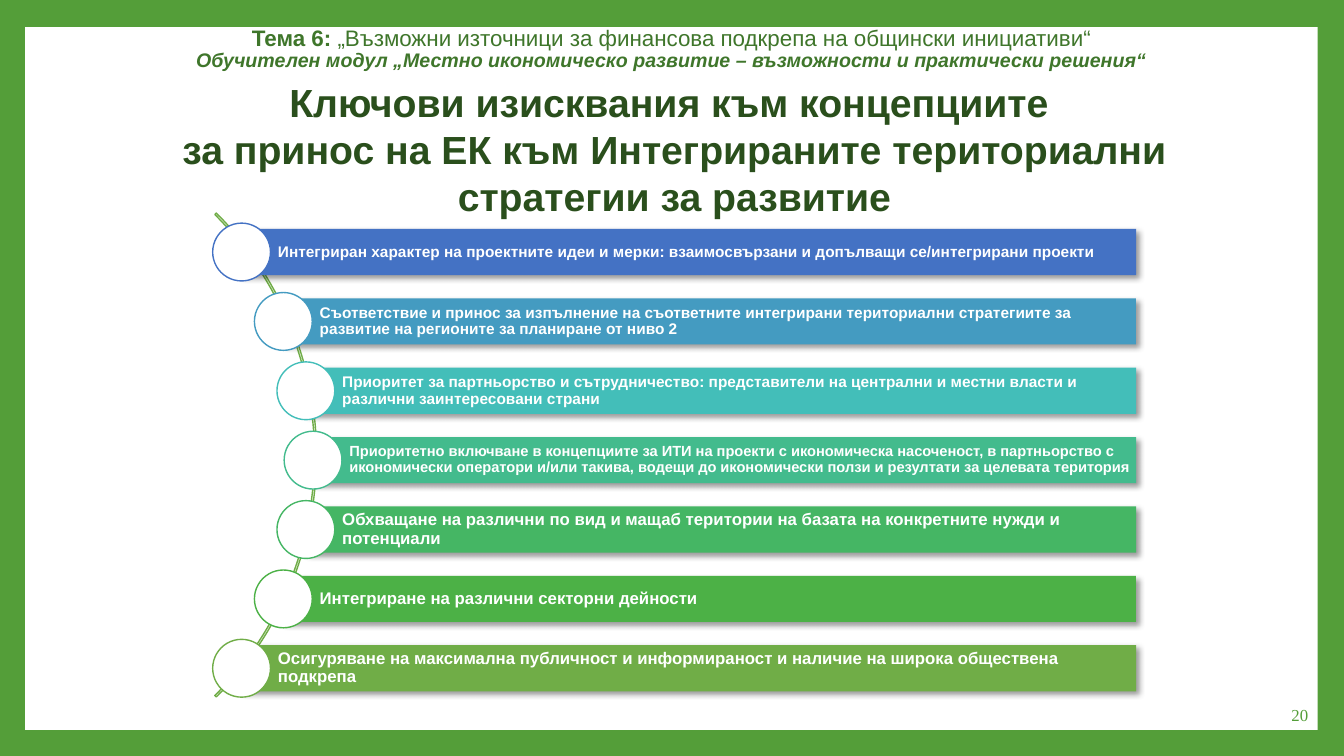
import math
from lxml import etree
from pptx import Presentation
from pptx import util as u
from pptx.dml.color import RGBColor
from pptx.enum import shapes, text
from pptx.oxml import ns

HEX = {"frame": "549E39", "white": "FFFFFF", "title": "2A4F1C",
       "head": "3F762B", "arc": "70AD47", "shade": "000000"}

# Bar colour, text size, wording
ROWS = [
    ("4472C4", 11, "Интегриран характер на проектните идеи и мерки: взаимосвързани и допълващи се/интегрирани проекти"),
    ("449BC1", 11, "Съответствие и принос за изпълнение на съответните интегрирани териториални стратегиите за развитие на регионите за планиране от ниво 2"),
    ("43BEB9", 11, "Приоритет за партньорство и сътрудничество: представители на централни и местни власти и различни заинтересовани страни"),
    ("43BB8D", 10.5, "Приоритетно включване в концепциите за ИТИ на проекти с икономическа насоченост, в партньорство с икономически оператори и/или такива, водещи до икономически ползи и резултати за целевата територия"),
    ("45B664", 12, "Обхващане на различни по вид и мащаб територии на базата на конкретните нужди и потенциали"),
    ("4CB146", 12, "Интегриране на различни секторни дейности"),
    ("70AD47", 12, "Осигуряване на максимална публичност и информираност и наличие на широка обществена подкрепа"),
]

# Bar layout: left ends lie on a circle around (MID_X, MID_Y)
MID_X, MID_Y, REACH = -18.4, 328.7, 242
STEP, BAR, DOT, RIGHT = 49.55, 33, 41.3, 811.5


def color(code):
    return RGBColor.from_string(code)


def box(left, top, width, height):
    return [u.Pt(v) for v in (left, top, width, height)]


def add_shape(slide, kind, place, fill=None, line=None):
    shape = slide.shapes.add_shape(kind, *box(*place))
    shape.shadow.inherit = False
    if fill:
        shape.fill.solid()
        shape.fill.fore_color.rgb = color(fill)
    else:
        shape.fill.background()
    if line:
        shape.line.color.rgb = color(line)
        shape.line.width = u.Pt(1)
    else:
        shape.line.fill.background()
    return shape


def style(run, size, code, bold=False, slant=False, face="Arial"):
    font = run.font
    font.size, font.name = u.Pt(size), face
    font.bold, font.italic = bold, slant
    font.color.rgb = color(code)


def add_text(slide, place, words, align, anchor):
    frame = slide.shapes.add_textbox(*box(*place)).text_frame
    frame.word_wrap = True
    frame.vertical_anchor = anchor
    frame.text = words
    for para in frame.paragraphs:
        para.alignment = align
    return frame


def add_shade(shape):
    effects = shape._element.spPr.find(ns.qn("a:effectLst"))
    shade = etree.SubElement(effects, ns.qn("a:outerShdw"), blurRad=str(u.Pt(4)),
                             dist=str(u.Pt(3)), dir="2700000", algn="tl", rotWithShape="0")
    tint = etree.SubElement(shade, ns.qn("a:srgbClr"), val=HEX["shade"])
    etree.SubElement(tint, ns.qn("a:alpha"), val="40000")


def add_row(slide, index, code, size, words):
    shift = (index - len(ROWS) // 2) * STEP
    left = MID_X + math.sqrt(REACH ** 2 - shift ** 2)
    mid = MID_Y + shift

    # Bar with its text
    bar = add_shape(slide, shapes.MSO_SHAPE.RECTANGLE,
                    (left, mid - BAR / 2, RIGHT - left, BAR), code)
    add_shade(bar)
    frame = bar.text_frame
    frame.word_wrap = True
    frame.vertical_anchor = text.MSO_ANCHOR.MIDDLE
    frame.margin_left = u.Pt(26)
    frame.margin_right = frame.margin_top = frame.margin_bottom = u.Pt(2)
    frame.text = words
    para = frame.paragraphs[0]
    para.alignment = text.PP_ALIGN.LEFT
    para.line_spacing = 0.9
    style(para.runs[0], size, HEX["white"], bold=True)

    # Circle over the left end
    add_shape(slide, shapes.MSO_SHAPE.OVAL,
              (left - DOT / 2, mid - DOT / 2, DOT, DOT), HEX["white"], code)


def add_title(slide):
    frame = add_text(slide, (97.2, 52.6, 765.4, 108.7),
                     "Ключови изисквания към концепциите \v"
                     "за принос на ЕК към Интегрираните териториални стратегии за развитие",
                     text.PP_ALIGN.CENTER, text.MSO_ANCHOR.TOP)
    para = frame.paragraphs[0]
    para._p.get_or_add_pPr().set("marL", str(u.Pt(3.6)))
    for run in para.runs:
        style(run, 28, HEX["title"], bold=True)


def add_head(slide):
    frame = add_text(slide, (26.6, 10.8, 906.5, 49),
                     "Тема 6: \nОбучителен модул „Местно икономическо развитие – "
                     "възможности и практически решения“",
                     text.PP_ALIGN.CENTER, text.MSO_ANCHOR.MIDDLE)
    theme, course = frame.paragraphs
    theme.line_spacing = course.line_spacing = 0.9
    style(theme.runs[0], 16, HEX["head"], bold=True)
    name = theme.add_run()
    name.text = "„Възможни източници за финансова подкрепа на общински инициативи“"
    style(name, 16, HEX["head"])
    style(course.runs[0], 14, HEX["head"], bold=True, slant=True)


def add_page(slide):
    frame = add_text(slide, (807, 496, 134.6, 28.8), "20",
                     text.PP_ALIGN.RIGHT, text.MSO_ANCHOR.MIDDLE)
    style(frame.paragraphs[0].runs[0], 12, HEX["frame"], face="Times New Roman")


def main():
    deck = Presentation()
    deck.slide_width, deck.slide_height = u.Pt(960), u.Pt(540)
    slide = deck.slides.add_slide(deck.slide_layouts[6])

    # Green frame around a white panel
    back = slide.background.fill
    back.solid()
    back.fore_color.rgb = color(HEX["frame"])
    add_shape(slide, shapes.MSO_SHAPE.RECTANGLE, (18, 19.3, 923.2, 502), HEX["white"])

    add_page(slide)
    add_title(slide)

    # Arc behind the circles
    arc = add_shape(slide, shapes.MSO_SHAPE.BLOCK_ARC,
                    (-262.8, 80.6, 488.9, 488.9), line=HEX["arc"])
    for index, value in enumerate((189, 27, 0.003)):
        arc.adjustments[index] = value

    for index, row in enumerate(ROWS):
        add_row(slide, index, *row)
    add_head(slide)
    deck.save("out.pptx")


if __name__ == "__main__":
    main()
